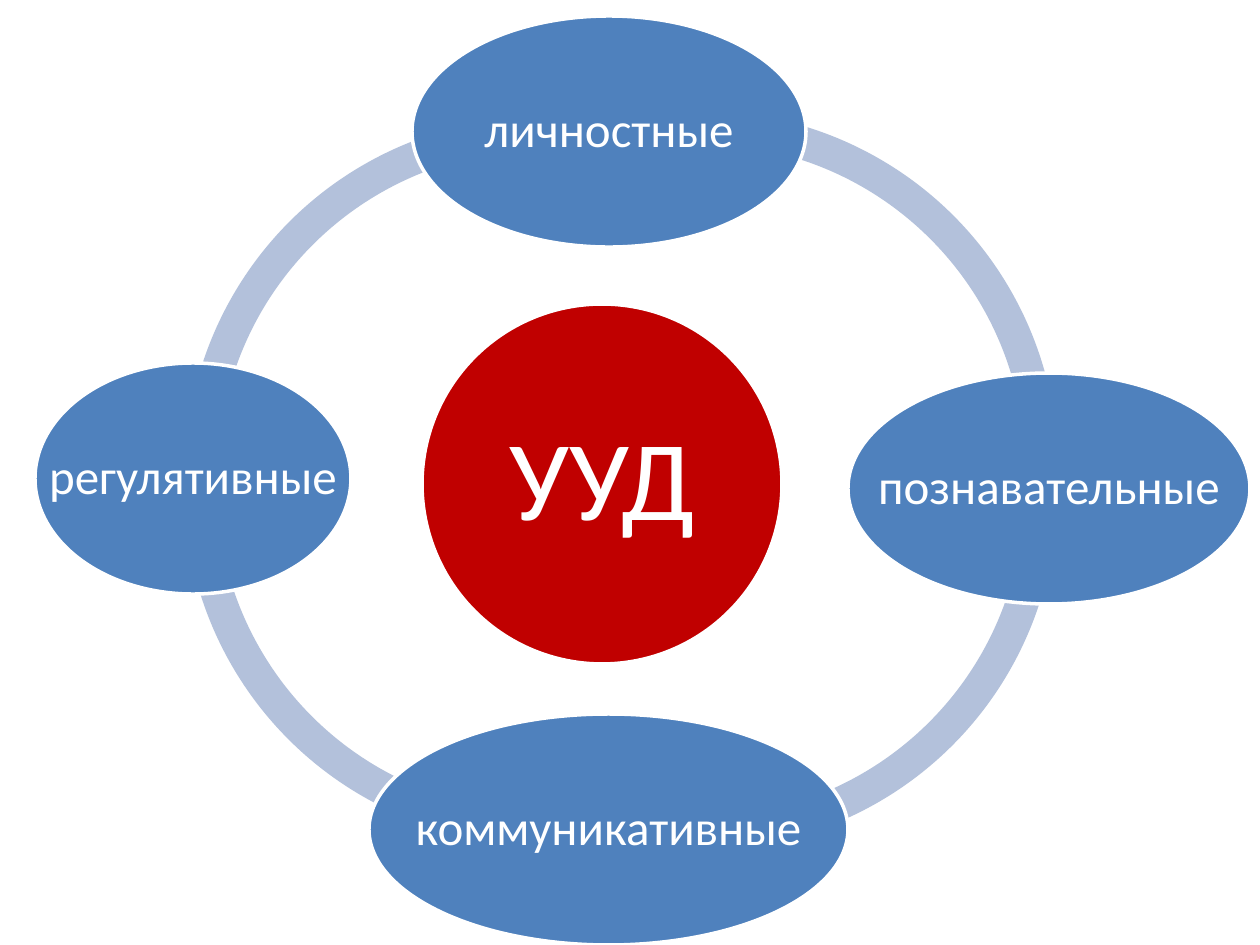
import pptx
import pptx.util
import pptx.dml.color
import pptx.enum.shapes
import pptx.enum.text

EMU_PER_PX = 914400 / 126
COLORS = {"arc": "B3C1DB", "center": "C00000", "node": "4F81BD", "white": "FFFFFF"}
ARC_SIZE = 714
ARC_THICKNESS = 0.046
NODE_HEIGHT = 231
ARCS = [
    (185, 117, 107.56, 168.62),
    (184, 130, 47.38, 108.83),
    (343, 136, 215.58, 63.14),
    (344, 111, 152.81, 2.01),
]
NODES = [
    ("личностные", 412, 16, 394),
    ("познавательные", 848, 373, 402),
    ("коммуникативные", 369, 714, 479),
    ("регулятивные", 35, 363, 316),
]


def px(value):
    return pptx.util.Emu(round(value * EMU_PER_PX))


def rgb(name):
    return pptx.dml.color.RGBColor.from_string(COLORS[name])


def set_values(target, values):
    for name, value in values.items():
        setattr(target, name, value)


def add_filled_shape(slide, kind, left, top, width, height, color):
    shape = slide.shapes.add_shape(kind, px(left), px(top), px(width), px(height))
    shape.shadow.inherit = False
    shape.fill.solid()
    shape.fill.fore_color.rgb = rgb(color)
    return shape


def add_arc(slide, left, top, start, end):
    kind = pptx.enum.shapes.MSO_SHAPE.BLOCK_ARC
    shape = add_filled_shape(slide, kind, left, top, ARC_SIZE, ARC_SIZE, "arc")
    shape.line.fill.background()
    for index, value in enumerate((start, end, ARC_THICKNESS)):
        shape.adjustments[index] = value


def add_ellipse(slide, text, left, top, width, height, color, size, margin):
    kind = pptx.enum.shapes.MSO_SHAPE.OVAL
    shape = add_filled_shape(slide, kind, left, top, width, height, color)
    shape.line.color.rgb = rgb("white")
    shape.line.width = pptx.util.Pt(2)
    frame = shape.text_frame
    sides = ("margin_left", "margin_top", "margin_right", "margin_bottom")
    set_values(frame, dict.fromkeys(sides, px(margin)))
    set_values(frame, {
        "word_wrap": False,
        "vertical_anchor": pptx.enum.text.MSO_ANCHOR.MIDDLE,
    })
    paragraph = frame.paragraphs[0]
    set_values(paragraph, {
        "alignment": pptx.enum.text.PP_ALIGN.CENTER,
        "line_spacing": 0.9,
    })
    run = paragraph.add_run()
    run.text = text
    set_values(run.font, {"name": "Calibri", "size": pptx.util.Pt(size)})
    run.font.color.rgb = rgb("white")


def main():
    presentation = pptx.Presentation()
    set_values(presentation, {"slide_width": px(1260), "slide_height": px(945)})
    slide = presentation.slides.add_slide(presentation.slide_layouts[6])
    for arc in ARCS:
        add_arc(slide, *arc)
    add_ellipse(slide, "УУД", 422, 304, 360, 360, "center", 65, 11)
    for text, left, top, width in NODES:
        add_ellipse(slide, text, left, top, width, NODE_HEIGHT, "node", 28, 5)
    presentation.save("out.pptx")


if __name__ == "__main__":
    main()
